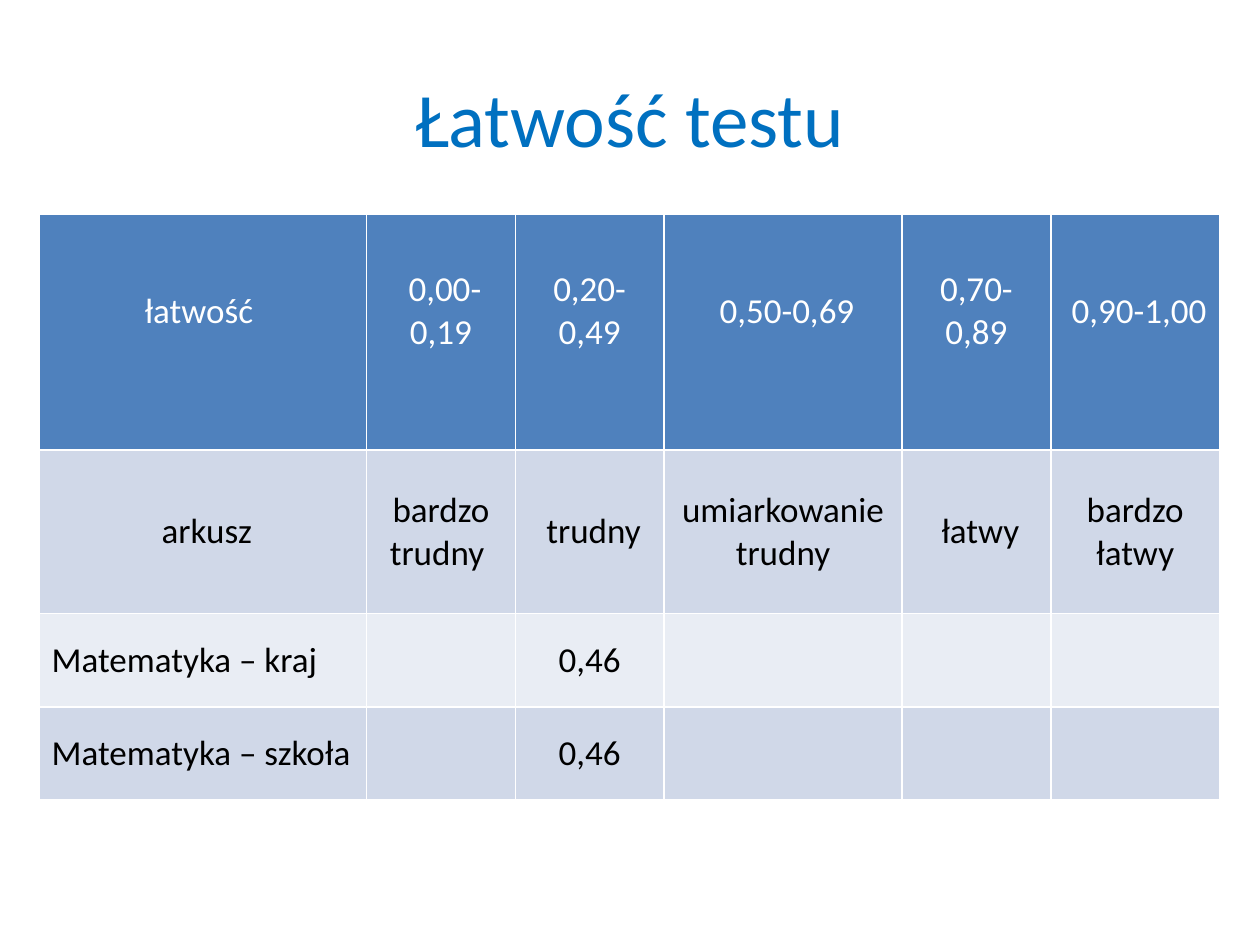
from pptx import Presentation
from pptx import util as u
from pptx.dml.color import RGBColor
from pptx.enum import text

WIDTH, HEIGHT = u.Inches(10), u.Inches(7.5)
FONT = "Calibri"
TITLE_BLUE = RGBColor(0x00, 0x70, 0xC0)
HEADER_BLUE = RGBColor(0x4F, 0x81, 0xBD)
BAND_DARK = RGBColor(0xD0, 0xD8, 0xE8)
BAND_LIGHT = RGBColor(0xE9, 0xED, 0xF4)
WHITE = RGBColor(0xFF, 0xFF, 0xFF)
BLACK = RGBColor(0x00, 0x00, 0x00)

COLUMNS = [2.6, 1.18, 1.18, 1.89, 1.18, 1.34]
ROWS = [1.87, 1.3, 0.74, 0.74]
CELLS = [
    ["łatwość ", " 0,00-0,19", "0,20-0,49", " 0,50-0,69", "0,70-0,89", " 0,90-1,00"],
    [" arkusz", "bardzo trudny ", " trudny", "umiarkowanie trudny", " łatwy", "bardzo łatwy"],
    ["Matematyka – kraj", "", "0,46", "", "", ""],
    ["Matematyka – szkoła", "", "0,46", "", "", ""],
]
FILLS = [HEADER_BLUE, BAND_DARK, BAND_LIGHT, BAND_DARK]


def write(tf, words, size=20, color=BLACK, align=text.PP_ALIGN.CENTER):
    """Write one formatted paragraph into a text frame."""
    p = tf.paragraphs[0]
    p.alignment = align
    p.font.size = u.Pt(size)
    if words:
        r = p.add_run()
        r.text = words
        r.font.name = FONT
        r.font.size = u.Pt(size)
        r.font.bold = False
        r.font.color.rgb = color


def add_title(s, words):
    """Place and format the title placeholder."""
    sp = s.shapes.title
    sp.left, sp.top = int(WIDTH * 0.05), int(HEIGHT * 0.04)
    sp.width, sp.height = int(WIDTH * 0.9), u.Inches(1.25)
    sp.text_frame.vertical_anchor = text.MSO_ANCHOR.MIDDLE
    write(sp.text_frame, words, size=44, color=TITLE_BLUE)


def add_easiness_table(s):
    """Add the table of easiness ranges and results."""
    table = s.shapes.add_table(
        len(ROWS), len(COLUMNS), u.Inches(0.31), u.Inches(1.7),
        u.Inches(sum(COLUMNS)), u.Inches(sum(ROWS))).table
    for column, width in zip(table.columns, COLUMNS):
        column.width = u.Inches(width)
    for i, (row, height) in enumerate(zip(table.rows, ROWS)):
        row.height = u.Inches(height)
        for j, cell in enumerate(row.cells):
            cell.fill.solid()
            cell.fill.fore_color.rgb = FILLS[i]
            cell.vertical_anchor = text.MSO_ANCHOR.MIDDLE
            if i == 0:
                cell.margin_bottom = u.Inches(0.38)
            is_label = i > 1 and j == 0
            write(cell.text_frame, CELLS[i][j],
                  color=WHITE if i == 0 else BLACK,
                  align=text.PP_ALIGN.LEFT if is_label else text.PP_ALIGN.CENTER)


def main():
    """Build the slide and save it."""
    prs = Presentation()
    prs.slide_width, prs.slide_height = WIDTH, HEIGHT
    s = prs.slides.add_slide(prs.slide_layouts[5])
    add_title(s, "Łatwość testu")
    add_easiness_table(s)
    prs.save("out.pptx")


if __name__ == "__main__":
    main()
